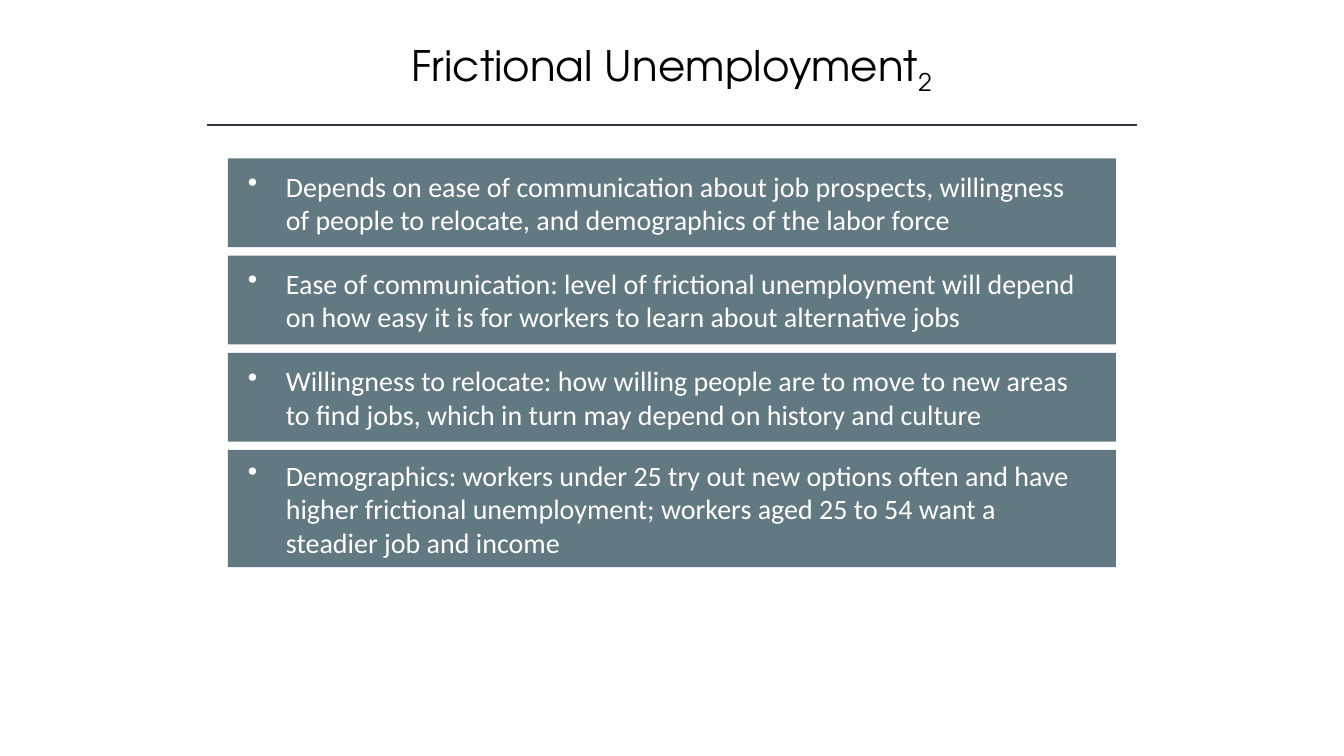
import pptx
import pptx.util
import pptx.dml.color
import pptx.enum.shapes
import pptx.enum.text
import pptx.oxml.ns
from lxml import etree

Cm, Pt = pptx.util.Cm, pptx.util.Pt
Color = pptx.dml.color.RGBColor.from_string
Text = pptx.enum.text

# Content: title with its subscript, then (text, line count) per panel
TITLE = ("Frictional Unemployment", "2")
POINTS = [
    ("Depends on ease of communication about job prospects, willingness "
     "of people to relocate, and demographics of the labor force", 2),
    ("Ease of communication: level of frictional unemployment will depend "
     "on how easy it is for workers to learn about alternative jobs", 2),
    ("Willingness to relocate: how willing people are to move to new areas "
     "to find jobs, which in turn may depend on history and culture", 2),
    ("Demographics: workers under 25 try out new options often and have "
     "higher frictional unemployment; workers aged 25 to 54 want a "
     "steadier job and income", 3),
]
THEME = {
    "head": ("TeX Gyre Adventor", 30, "000000"),
    "body": ("Calibri", 20, "FFFFFF"),
    "panel": "627981",
    "rule": "323542",
}

# Layout in centimetres
WIDE, HIGH = 33.87, 19.05
PANEL, TOP, GAP = 22.38, 3.99, 0.21
HEIGHTS = {2: 2.24, 3: 2.95}
RULE, LEVEL = 23.42, 3.15
HANG = 0.96


def style(para, key):
    name, size, color = THEME[key]
    for run in para.runs:
        run.font.name, run.font.size = name, Pt(size)
        run.font.color.rgb = Color(color)


def bullet(para):
    props = para._p.get_or_add_pPr()
    props.set("marL", str(Cm(HANG)))
    props.set("indent", str(-Cm(HANG)))
    mark = etree.SubElement(props, pptx.oxml.ns.qn("a:buChar"))
    mark.set("char", "•")


def add_title(slide):
    box = slide.shapes.add_textbox(Cm((WIDE - 25.4) / 2), Cm(0.94), Cm(25.4), Cm(1.55))
    frame = box.text_frame
    frame.word_wrap = True
    frame.vertical_anchor = Text.MSO_ANCHOR.MIDDLE
    para = frame.paragraphs[0]
    para.alignment = Text.PP_ALIGN.CENTER
    for part in TITLE:
        para.add_run().text = part
    style(para, "head")
    para.runs[1]._r.get_or_add_rPr().set("baseline", "-25000")


def add_rule(slide):
    left = (WIDE - RULE) / 2
    line = slide.shapes.add_connector(
        pptx.enum.shapes.MSO_CONNECTOR.STRAIGHT,
        Cm(left), Cm(LEVEL), Cm(left + RULE), Cm(LEVEL))
    line.line.color.rgb = Color(THEME["rule"])
    line.line.width = Pt(1)
    etree.SubElement(line._element.spPr, pptx.oxml.ns.qn("a:effectLst"))


def add_panel(slide, text, top, height):
    panel = slide.shapes.add_shape(
        pptx.enum.shapes.MSO_SHAPE.RECTANGLE,
        Cm((WIDE - PANEL) / 2), Cm(top), Cm(PANEL), Cm(height))
    panel.shadow.inherit = False
    panel.fill.solid()
    panel.fill.fore_color.rgb = Color(THEME["panel"])
    panel.line.fill.background()
    frame = panel.text_frame
    frame.word_wrap = True
    frame.vertical_anchor = Text.MSO_ANCHOR.MIDDLE
    frame.margin_left, frame.margin_right = Cm(0.5), Cm(0.69)
    frame.text = text
    para = frame.paragraphs[0]
    para.alignment = Text.PP_ALIGN.LEFT
    bullet(para)
    style(para, "body")


def main():
    deck = pptx.Presentation()
    deck.slide_width, deck.slide_height = Cm(WIDE), Cm(HIGH)
    slide = deck.slides.add_slide(deck.slide_layouts[6])

    # Heading
    add_title(slide)
    add_rule(slide)

    # Stacked panels
    top = TOP
    for text, lines in POINTS:
        add_panel(slide, text, top, HEIGHTS[lines])
        top += HEIGHTS[lines] + GAP

    deck.save("out.pptx")


if __name__ == "__main__":
    main()
